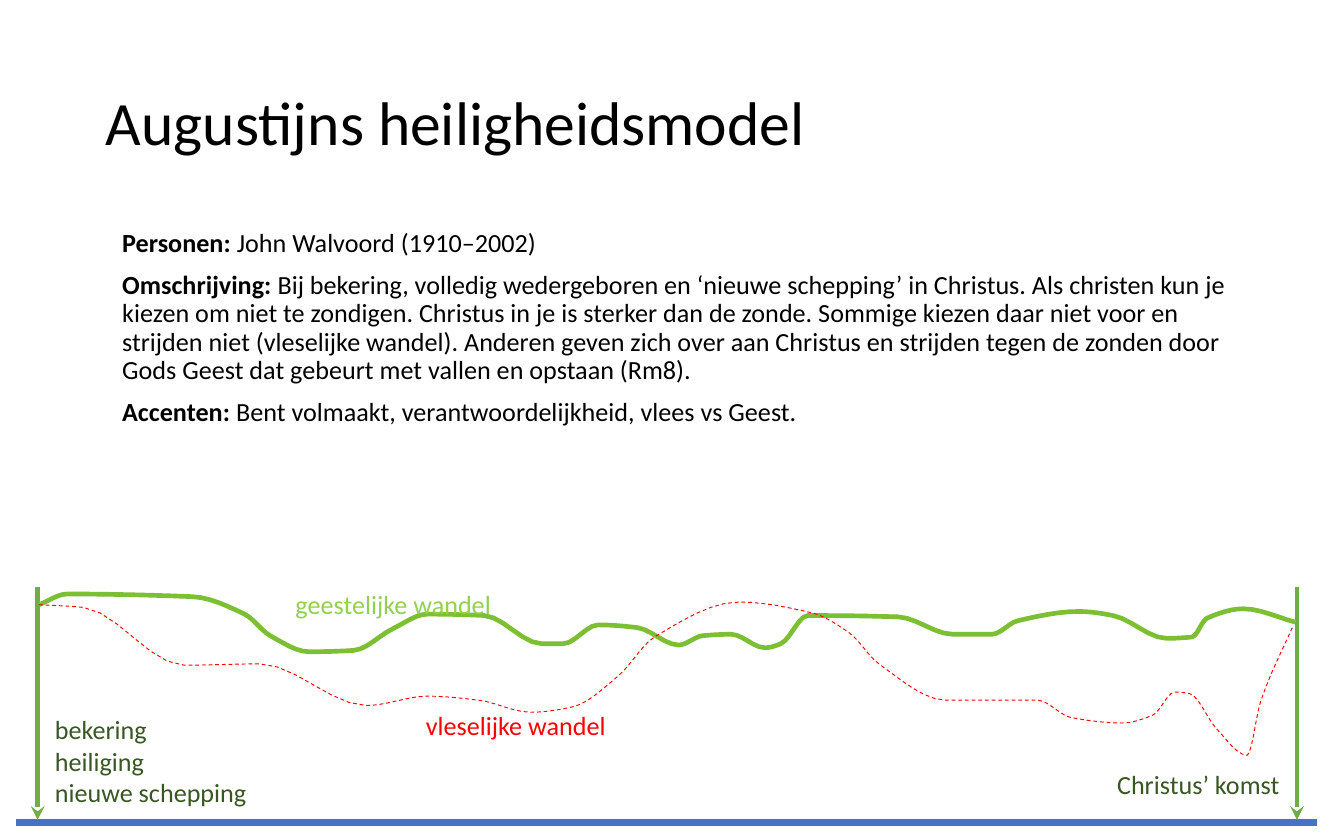
from lxml import etree
from pptx import Presentation
from pptx import util as u
from pptx.dml.color import RGBColor
from pptx.enum import dml, shapes, text
from pptx.oxml.ns import qn

FONT = "Calibri"
BLACK, DARK_GREEN, ARROW_GREEN = "000000", "385723", "70AD47"

# Content
TITLE = "Augustijns heiligheidsmodel"
BODY = [
    ("Personen:", " John Walvoord (1910–2002)"),
    ("Omschrijving:",
     " Bij bekering, volledig wedergeboren en ‘nieuwe schepping’ in Christus. "
     "Als christen kun je kiezen om niet te zondigen. Christus in je is sterker "
     "dan de zonde. Sommige kiezen daar niet voor en strijden niet (vleselijke "
     "wandel). Anderen geven zich over aan Christus en strijden tegen de zonden "
     "door Gods Geest dat gebeurt met vallen en opstaan (Rm8)."),
    ("Accenten:", " Bent volmaakt, verantwoordelijkheid, vlees vs Geest."),
]
# Labels: lines, left, top, height, colour, alignment
LABELS = [
    (["bekering", "heiliging", "nieuwe schepping"], 0.31, 5.26, 0.81, DARK_GREEN, "LEFT"),
    (["Christus’ komst"], 7.69, 5.67, 0.34, DARK_GREEN, "RIGHT"),
    (["vleselijke wandel"], 3.07, 5.23, 0.34, "FF0000", "LEFT"),
    (["geestelijke wandel"], 2.1, 4.33, 0.34, "92D050", "LEFT"),
]
# Turning points of the two walks, in inches; a smooth curve joins them
SPIRITUAL_WALK = [
    (0.29, 4.5), (0.5, 4.42), (1.43, 4.44), (1.82, 4.57), (2.01, 4.73),
    (2.3, 4.85), (2.63, 4.84), (2.92, 4.68), (3.18, 4.57), (3.6, 4.58),
    (4.03, 4.79), (4.19, 4.79), (4.45, 4.65), (4.74, 4.67), (5.05, 4.8),
    (5.23, 4.73), (5.44, 4.72), (5.69, 4.82), (5.81, 4.79), (6.01, 4.58),
    (6.68, 4.59), (7.09, 4.72), (7.38, 4.72), (7.57, 4.62), (8.03, 4.55),
    (8.28, 4.58), (8.68, 4.75), (8.87, 4.74), (8.98, 4.6), (9.25, 4.53),
    (9.64, 4.63),
]
CARNAL_WALK = [
    (0.29, 4.5), (0.62, 4.52), (1.37, 4.95), (1.93, 4.94), (2.73, 5.25),
    (3.18, 5.18), (3.56, 5.21), (3.95, 5.3), (4.26, 5.26), (4.6, 5.03),
    (4.87, 4.74), (5.5, 4.48), (6.04, 4.56), (6.32, 4.71), (6.54, 4.94),
    (7.04, 5.21), (7.72, 5.21), (7.97, 5.34), (8.35, 5.38), (8.58, 5.32),
    (8.74, 5.15), (8.85, 5.16), (9.05, 5.42), (9.28, 5.62), (9.38, 5.22),
    (9.62, 4.66),
]
STEPS = 6


def rgb(value):
    return RGBColor.from_string(value)


def style_line(line, colour, width):
    line.color.rgb = rgb(colour)
    line.width = u.Pt(width)


def add_text(slide, left, top, width, height, paragraphs, size, colour, align="LEFT"):
    """Each paragraph is a list of (text, bold) runs."""
    box = slide.shapes.add_textbox(*map(u.Inches, (left, top, width, height)))
    frame = box.text_frame
    frame.word_wrap = True
    for index, runs in enumerate(paragraphs):
        paragraph = frame.paragraphs[0] if index == 0 else frame.add_paragraph()
        paragraph.alignment = getattr(text.PP_ALIGN, align)
        for content, bold in runs:
            run = paragraph.add_run()
            run.text = content
            run.font.name, run.font.size, run.font.bold = FONT, u.Pt(size), bold
            run.font.color.rgb = rgb(colour)
    return frame


def add_line(slide, start, end, colour, width, arrow=False):
    connector = slide.shapes.add_connector(
        shapes.MSO_CONNECTOR.STRAIGHT, *map(u.Inches, start + end))
    style_line(connector.line, colour, width)
    properties = connector._element.spPr
    if arrow:
        etree.SubElement(properties.find(qn("a:ln")), qn("a:tailEnd"), type="stealth")
    etree.SubElement(properties, qn("a:effectLst"))


def smooth(points):
    """Cubic curve through the points; level at every high and low point."""
    slopes = [(d[1] - c[1]) / (d[0] - c[0]) for c, d in zip(points, points[1:])]
    inner = [2 * a * b / (a + b) if a * b > 0 else 0 for a, b in zip(slopes, slopes[1:])]
    tangents = [slopes[0], *inner, slopes[-1]]
    curve = [points[0]]
    for index, ((x0, y0), (x1, y1)) in enumerate(zip(points, points[1:])):
        width = x1 - x0
        for step in range(1, STEPS + 1):
            t = step / STEPS
            blend = t * t * (3 - 2 * t)
            pull = width * t * (1 - t) * (
                (1 - t) * tangents[index] - t * tangents[index + 1])
            curve.append((x0 + width * t, y0 + (y1 - y0) * blend + pull))
    return curve


def add_walk(slide, points, colour, width):
    curve = [(u.Inches(x), u.Inches(y)) for x, y in smooth(points)]
    builder = slide.shapes.build_freeform(*curve[0])
    builder.add_line_segments(curve[1:], close=False)
    walk = builder.convert_to_shape()
    walk.shadow.inherit = False
    walk.fill.background()
    style_line(walk.line, colour, width)
    return walk


presentation = Presentation()
presentation.slide_width, presentation.slide_height = u.Inches(10), u.Inches(6.25)
slide = presentation.slides.add_slide(presentation.slide_layouts[6])

# Title and explanation
title = add_text(slide, 0.69, 0.33, 8.62, 1.21, [[(TITLE, False)]], 33, BLACK)
title.vertical_anchor = text.MSO_ANCHOR.MIDDLE
title.paragraphs[0].line_spacing = 0.9
body = add_text(slide, 0.69, 1.66, 8.62, 3.97,
                [[(term, True), (rest, False)] for term, rest in BODY], 14, BLACK)
for paragraph in body.paragraphs:
    paragraph.line_spacing = 0.9
    paragraph.space_before = u.Pt(7.5)
    paragraph._p.get_or_add_pPr().set("marL", str(u.Inches(0.12)))

# Baseline with an arrow at the start and at the end
add_line(slide, (0.12, 6.12), (9.8, 6.12), "4472C4", 3.5)
for x in (0.28, 9.65):
    add_line(slide, (x, 4.37), (x, 6.1), ARROW_GREEN, 2.5, arrow=True)

# The two walks
add_walk(slide, SPIRITUAL_WALK, "7CBF33", 2.5)
carnal = add_walk(slide, CARNAL_WALK, "FF0000", 0.5)
carnal.line.dash_style = dml.MSO_LINE.DASH

# Labels
for lines, left, top, height, colour, align in LABELS:
    add_text(slide, left, top, 1.93, height,
             [[(line, False)] for line in lines], 14, colour, align)

presentation.save("out.pptx")
